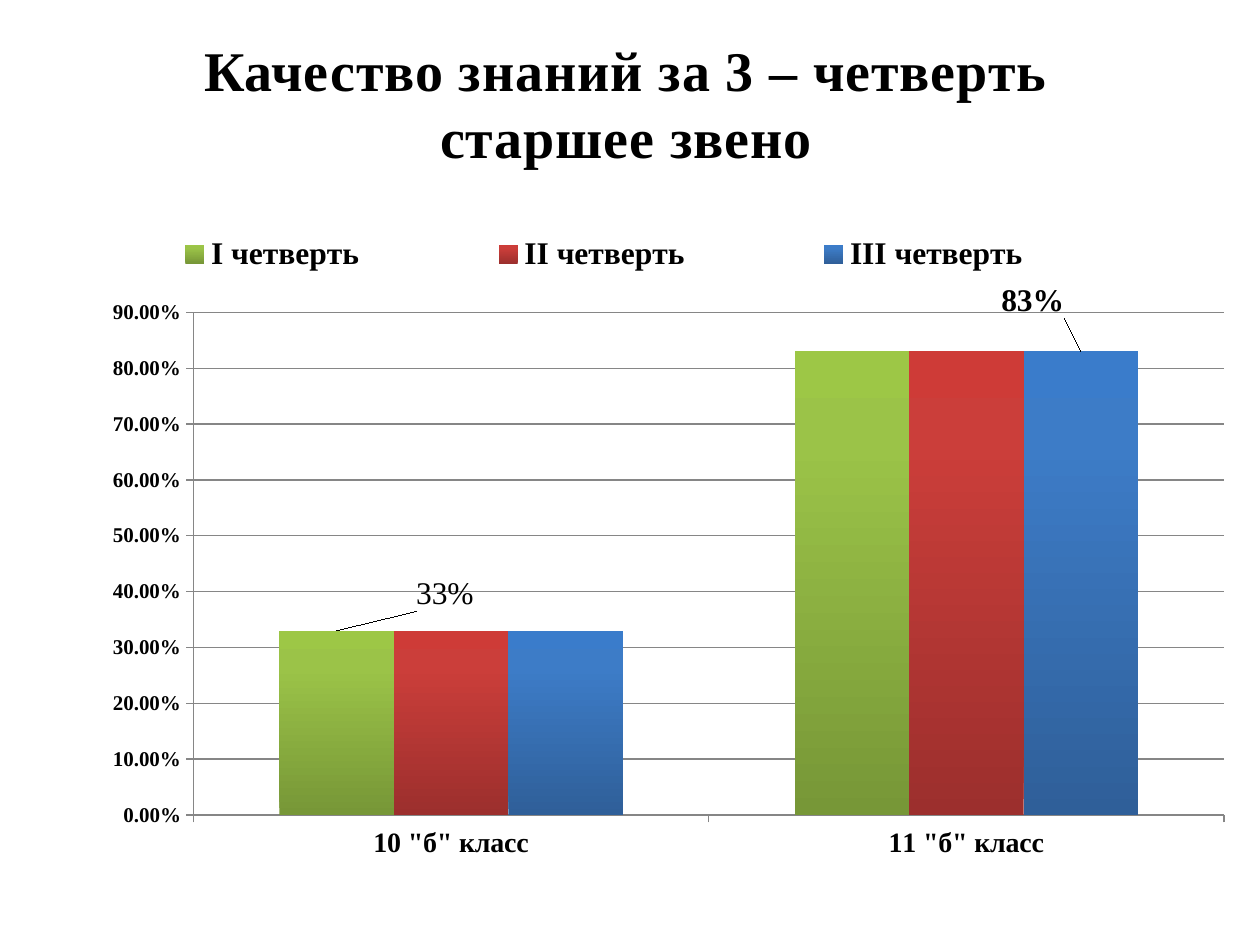
import pptx
import pptx.util
import pptx.chart.data
import pptx.dml.color
import pptx.enum.chart
import pptx.enum.text
import pptx.oxml.ns
import lxml.etree

Inches, Pt = pptx.util.Inches, pptx.util.Pt
qn = pptx.oxml.ns.qn
FACE = "Times New Roman"


def style(font, size, bold=True, color="000000"):
    font.name, font.size, font.bold = FACE, Pt(size), bold
    font.color.rgb = pptx.dml.color.RGBColor.from_string(color)


def layout(node, spot, **vals):
    """Put a manual layout right after the child named spot."""
    old = node.find(qn("c:layout"))
    if old is not None:
        node.remove(old)
    lay = lxml.etree.Element(qn("c:layout"))
    man = lxml.etree.SubElement(lay, qn("c:manualLayout"))
    for key, val in vals.items():
        lxml.etree.SubElement(man, qn("c:" + key)).set("val", str(val))
    mark = node.find(qn(spot)) if spot else None
    node.insert(0 if mark is None else node.index(mark) + 1, lay)


deck = pptx.Presentation()
deck.slide_width, deck.slide_height = Inches(10), Inches(7.5)
slide = deck.slides.add_slide(deck.slide_layouts[6])

# Title
box = slide.shapes.add_textbox(Inches(0.23), Inches(0.23), Inches(9.48), Inches(1.18))
box.text_frame.word_wrap = True
para = box.text_frame.paragraphs[0]
para.alignment = pptx.enum.text.PP_ALIGN.CENTER
for num, line in enumerate(["Качество знаний за 3 – четверть", "старшее звено"]):
    if num:
        para.add_line_break()
    run = para.add_run()
    run.text = line
    style(run.font, 32)
    run.font._element.set("spc", "50")

# Chart data
terms = [
    ("I четверть", ["779737", "9BC348", "9DC746"]),
    ("II четверть", ["9C2F2D", "CB3E3A", "CE3B37"]),
    ("III четверть", ["2F5F99", "3D7CC7", "3A7CCB"]),
]
data = pptx.chart.data.CategoryChartData(number_format="0%")
data.categories = ['10 "б" класс', '11 "б" класс']
for name, _ in terms:
    data.add_series(name, [0.33, 0.83])
chart = slide.shapes.add_chart(
    pptx.enum.chart.XL_CHART_TYPE.COLUMN_CLUSTERED,
    Inches(0.16), Inches(1.48), Inches(9.56), Inches(5.65), data).chart
chart.has_title = False
chart.font.name, chart.font.size = "Calibri", Pt(18)
plot = chart.plots[0]
plot.gap_width, plot.overlap, plot.vary_by_categories = 150, 0, False
layout(chart._chartSpace.chart.plotArea, None, layoutTarget="inner", xMode="edge",
       yMode="edge", x=0.144, y=0.177, w=0.856, h=0.706)

# Axes
gray = pptx.dml.color.RGBColor.from_string("868686")
cat, val = chart.category_axis, chart.value_axis
val.minimum_scale, val.maximum_scale, val.major_unit = 0, 0.9, 0.1
val.has_major_gridlines = True
val.tick_labels.number_format = "0.00%"
val.tick_labels.number_format_is_linked = False
for axis, size in [(cat, 16), (val, 12)]:
    style(axis.tick_labels.font, size)
    axis.major_tick_mark = pptx.enum.chart.XL_TICK_MARK.OUTSIDE
for part in [cat, val, val.major_gridlines]:
    part.format.line.color.rgb = gray
    part.format.line.width = Pt(0.75)

# Legend
chart.has_legend = True
chart.legend.position = pptx.enum.chart.XL_LEGEND_POSITION.RIGHT
chart.legend.include_in_layout = False
style(chart.legend.font, 18)
layout(chart.legend._element, "c:legendPos", xMode="edge", yMode="edge",
       x=0.03, y=0.05, w=0.91, h=0.09)

# Gradient columns
for row, (_, tones) in zip(plot.series, terms):
    row.invert_if_negative = False
    row.format.fill.gradient()
    row.format.fill.gradient_angle = 90
    stops = next(row._element.iter(qn("a:gsLst")))
    for stop in list(stops):
        stops.remove(stop)
    for pos, tone in zip([0, 80, 100], tones):
        stop = lxml.etree.SubElement(stops, qn("a:gs"), pos=str(pos * 1000))
        lxml.etree.SubElement(stop, qn("a:srgbClr"), val=tone)

# Two value labels, moved off their columns: series, point, bold, shift
for num, idx, bold, dx, dy in [(0, 0, False, 0.09, -0.02), (2, 1, True, -0.04, -0.04)]:
    row = plot.series[num]
    row.data_labels.show_value = False
    label = row.points[idx].data_label
    style(label.font, 18, bold)
    label.position = pptx.enum.chart.XL_LABEL_POSITION.OUTSIDE_END
    for node in row._element.iter(qn("c:dLbl")):
        layout(node, "c:idx", x=dx, y=dy)

deck.save("out.pptx")
